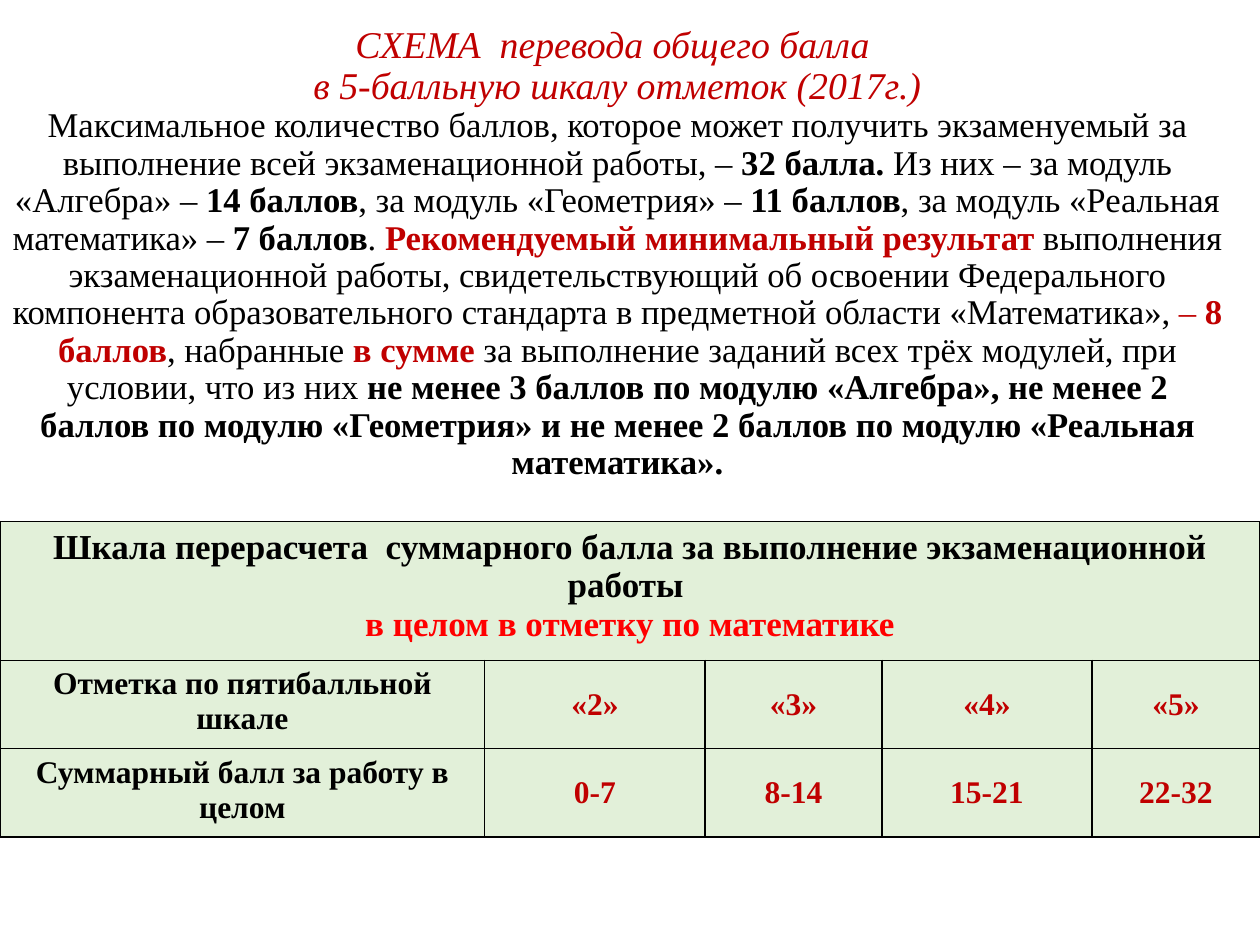
from lxml import etree
from pptx import Presentation
from pptx import util as u
from pptx.dml import color
from pptx.enum import text
from pptx.oxml import ns

COLORS = {"black": "000000", "dark red": "C00000", "red": "FF0000", "green": "E2F0D9"}


def add_text(paragraph, content, size, fill="black", bold=False, italic=False):
    """Append formatted text, turning each newline into a line break."""
    paragraph.alignment = text.PP_ALIGN.CENTER
    for index, line in enumerate(content.split("\n")):
        if index:
            paragraph.add_line_break()
        if line:
            run = paragraph.add_run()
            run.text = line
            run.font.name = "Times New Roman"
            run.font.size = u.Pt(size)
            run.font.bold = bold
            run.font.italic = italic
            run.font.color.rgb = color.RGBColor.from_string(COLORS[fill])


def style_cell(cell):
    """Give a cell its fill and thin black borders."""
    cell.fill.solid()
    cell.fill.fore_color.rgb = color.RGBColor.from_string(COLORS["green"])
    properties = cell._tc.get_or_add_tcPr()
    for index, side in enumerate(("lnL", "lnR", "lnT", "lnB")):
        line = etree.Element(ns.qn(f"a:{side}"), w=str(u.Pt(1)))
        solid = etree.SubElement(line, ns.qn("a:solidFill"))
        etree.SubElement(solid, ns.qn("a:srgbClr"), val=COLORS["black"])
        properties.insert(index, line)


presentation = Presentation()
presentation.slide_width = u.Pt(720)
presentation.slide_height = u.Pt(540)
slide = presentation.slides.add_slide(presentation.slide_layouts[6])

# Explanation of the marks
box = slide.shapes.add_textbox(u.Pt(0), u.Pt(106), u.Pt(705.6), u.Pt(57))
frame = box.text_frame
frame.word_wrap = True
frame.vertical_anchor = text.MSO_ANCHOR.MIDDLE
frame.margin_top = u.Pt(25)
paragraph = frame.paragraphs[0]
paragraph.line_spacing = 0.9
add_text(paragraph, "СХЕМА  перевода общего балла \nв 5-балльную шкалу отметок (2017г.)\n",
         21.6, fill="dark red", italic=True)
explanation = [
    ("Максимальное количество баллов, которое может получить экзаменуемый за "
     "выполнение всей экзаменационной работы, – ", "black", False),
    ("32 балла. ", "black", True),
    ("Из них – за модуль «Алгебра» – ", "black", False),
    ("14 баллов", "black", True),
    (", за модуль «Геометрия» – ", "black", False),
    ("11 баллов", "black", True),
    (", за модуль «Реальная математика» – ", "black", False),
    ("7 баллов", "black", True),
    (". ", "black", False),
    ("Рекомендуемый минимальный результат ", "dark red", True),
    ("выполнения экзаменационной работы, свидетельствующий об освоении "
     "Федерального компонента образовательного стандарта в предметной области "
     "«Математика», ", "black", False),
    ("– ", "dark red", False),
    ("8 баллов", "dark red", True),
    (", набранные ", "black", False),
    ("в сумме ", "dark red", True),
    ("за выполнение заданий всех трёх модулей, при условии, что из них ", "black", False),
    ("не менее 3 баллов по модулю «Алгебра», не менее 2 баллов по модулю "
     "«Геометрия» и не менее 2 баллов по модулю «Реальная математика».", "black", True),
]
for content, fill, bold in explanation:
    add_text(paragraph, content, 19.8, fill=fill, bold=bold)

# Conversion scale
column_widths = [277, 126, 101, 120, 96]
row_heights = [79.4, 50.3, 50.3]
table = slide.shapes.add_table(3, 5, u.Pt(0), u.Pt(298), u.Pt(720), u.Pt(180)).table
for column, width in zip(table.columns, column_widths):
    column.width = u.Pt(width)
for row, height in zip(table.rows, row_heights):
    row.height = u.Pt(height)
for cell in table.iter_cells():
    style_cell(cell)

heading = table.cell(0, 0)
heading.merge(table.cell(0, 4))
add_text(heading.text_frame.paragraphs[0],
         "Шкала перерасчета  суммарного балла за выполнение экзаменационной работы ",
         20, bold=True)
add_text(heading.text_frame.add_paragraph(), "в целом в отметку по математике",
         20, fill="red", bold=True)

scale = [
    ["Отметка по пятибалльной шкале", "«2»", "«3»", "«4»", "«5»"],
    ["Суммарный балл за работу в целом", "0-7", "8-14", "15-21", "22-32"],
]
for row_index, values in enumerate(scale, start=1):
    for column_index, value in enumerate(values):
        cell = table.cell(row_index, column_index)
        if column_index:
            cell.vertical_anchor = text.MSO_ANCHOR.MIDDLE
        add_text(cell.text_frame.paragraphs[0], value, 18,
                 fill="dark red" if column_index else "black", bold=True)

presentation.save("out.pptx")
